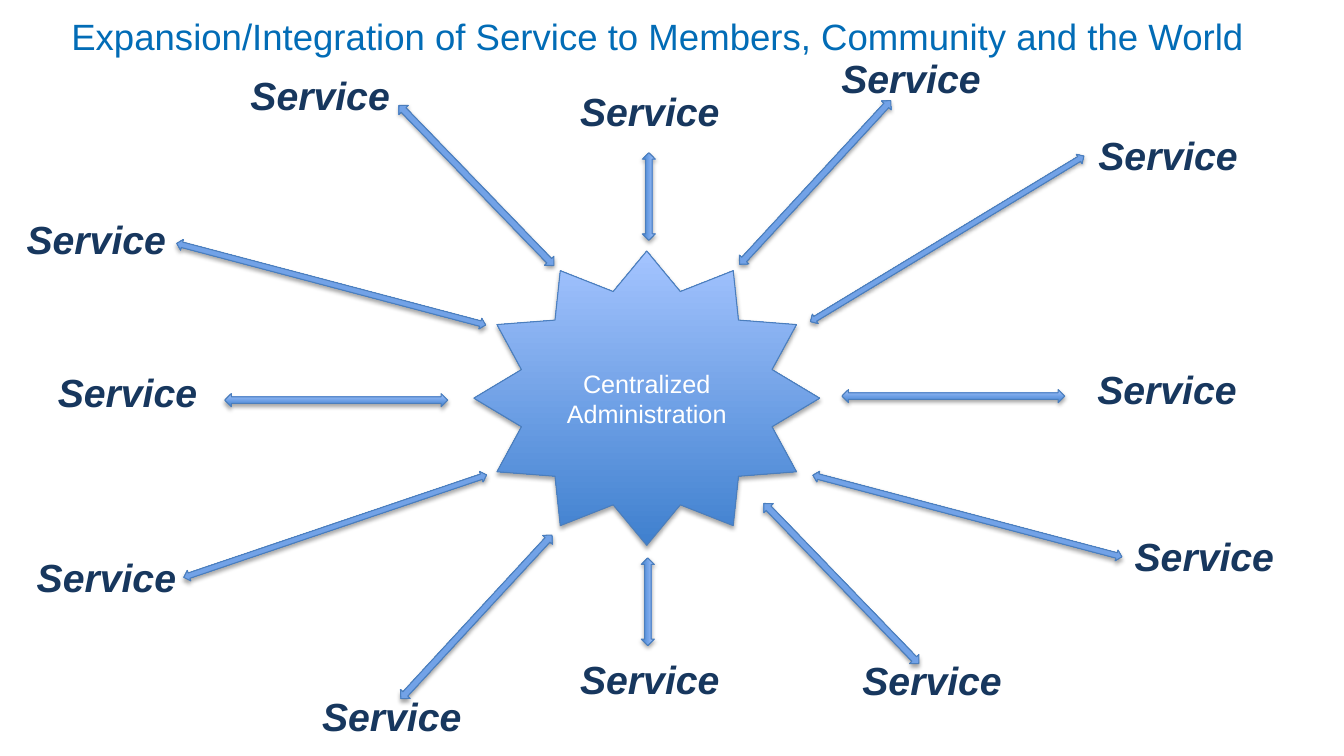
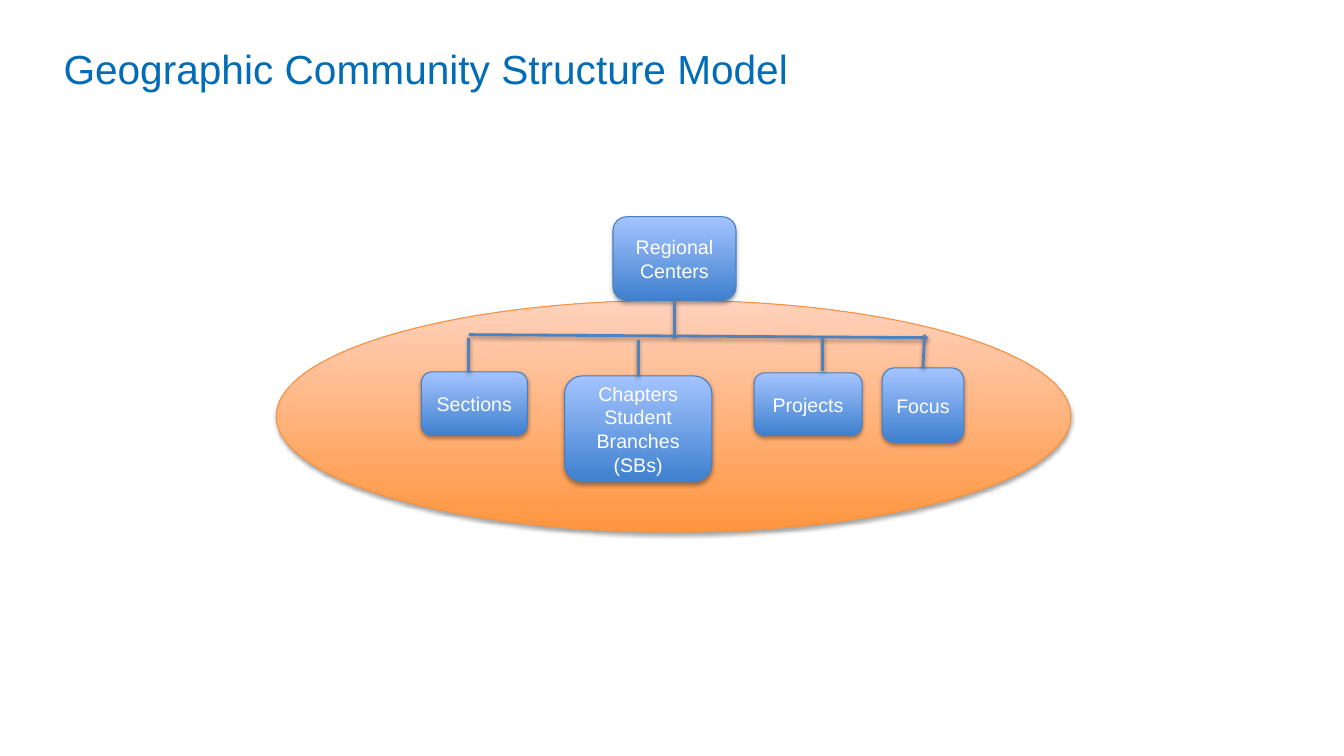
from collections import namedtuple

from lxml.etree import SubElement
from pptx import Presentation
from pptx.dml.color import RGBColor
from pptx.enum.shapes import MSO_CONNECTOR, MSO_SHAPE
from pptx.enum.text import MSO_ANCHOR, MSO_AUTO_SIZE, PP_ALIGN
from pptx.oxml.ns import qn
from pptx.util import Inches, Pt

FONT = "Arial"
TITLE_BLUE = "026CB6"
NAVY = "17375E"
WHITE = "FFFFFF"
BLACK = "000000"
LINK_BLUE = "4F81BD"

Box = namedtuple("Box", "left top width height")
Theme = namedtuple("Theme", "dark light outline")
Spoke = namedtuple("Spoke", "label arrow size rotation")
Node = namedtuple("Node", "text box")

BLUE = Theme("3F80CE", "A4C4FF", "4B7EBC")
ORANGE = Theme("FF953E", "FFD2BD", "F69240")

LONG = (3.17, 0.11)
MEDIUM = (2.21, 0.13)
SHORT = (0.87, 0.13)
LABEL = (1.6, 0.57)

SPOKES = [
    Spoke((5.17, -2.41), (2.98, -1.58), LONG, 328.8),
    Spoke((5.53, 1.57), (3.18, 1.17), LONG, 14.8),
    Spoke((-5.46, -1.58), (-3.13, -1.13), LONG, 14.8),
    Spoke((5.16, -0.09), (3.04, -0.02), MEDIUM, 0),
    Spoke((-5.36, 1.78), (-3.09, 1.27), LONG, 341.3),
    Spoke((-5.15, -0.06), (-3.08, 0.02), MEDIUM, 0),
    Spoke((0.03, -2.85), (0.02, -2), SHORT, 90),
    Spoke((0.03, 2.79), (0.01, 2.02), SHORT, 90),
    Spoke((-3.24, -3.01), (-1.69, -2.11), MEDIUM, 46),
    Spoke((2.62, -3.18), (1.67, -2.14), MEDIUM, 132.7),
    Spoke((2.83, 2.8), (1.93, 1.84), MEDIUM, 46),
    Spoke((-2.53, 3.15), (-1.69, 2.17), MEDIUM, 132.7),
]

REGIONAL = Node("Regional Centers", Box(3.34, -0.83, 1.22, 0.83))
UNITS = [
    Node("Sections", Box(1.44, 0.71, 1.05, 0.63)),
    Node("Chapters Student Branches\n(SBs)", Box(2.86, 0.75, 1.46, 1.05)),
    Node("Projects", Box(4.74, 0.72, 1.07, 0.62)),
    Node("Focus", Box(6.01, 0.67, 0.81, 0.74)),
]
DROPS = [(1.91, 0.37, False), (3.59, 0.39, True), (5.42, 0.36, False), (6.43, 0.34, True)]
DROP_LENGTH = 0.34


def rgb(color):
    return RGBColor.from_string(color)


def inches(box):
    return [Inches(length) for length in box]


def centred(center, size):
    return Box(center[0] - size[0] / 2, center[1] - size[1] / 2, *size)


def shifted(box, origin):
    return Box(origin.left + box.left, origin.top + box.top, box.width, box.height)


def format_text(frame, size, color, align=PP_ALIGN.CENTER):
    for paragraph in frame.paragraphs:
        paragraph.alignment = align
        for run in paragraph.runs:
            run.font.name = FONT
            run.font.size = Pt(size)
            run.font.color.rgb = rgb(color)


def fill_shadow(effects, distance, opacity):
    shadow = SubElement(effects, qn("a:outerShdw"), blurRad=str(Pt(3.1)),
                        dist=str(Pt(distance)), dir="5400000", rotWithShape="0")
    tint = SubElement(shadow, qn("a:srgbClr"), val=BLACK)
    SubElement(tint, qn("a:alpha"), val=str(opacity * 1000))


def add_glossy(slide, kind, box, theme, text="", size=14):
    shape = slide.shapes.add_shape(kind, *inches(box))
    shape.fill.gradient()
    shape.fill.gradient_angle = 90
    for stop, color, position in zip(shape.fill.gradient_stops, theme[:2], (0, 1)):
        stop.color.rgb = rgb(color)
        stop.position = position
    shape.line.color.rgb = rgb(theme.outline)
    shape.line.width = Pt(0.75)
    shape.shadow.inherit = False
    fill_shadow(shape._element.spPr.find(qn("a:effectLst")), 1.8, 35)
    if text:
        frame = shape.text_frame
        frame.text = text
        frame.word_wrap = True
        frame.vertical_anchor = MSO_ANCHOR.MIDDLE
        format_text(frame, size, WHITE)
    return shape


def add_link(slide, origin, start, end):
    ends = [Inches(base + step) for point in (start, end)
            for base, step in zip(origin, point)]
    link = slide.shapes.add_connector(MSO_CONNECTOR.STRAIGHT, *ends)
    link.line.color.rgb = rgb(LINK_BLUE)
    link.line.width = Pt(2)
    fill_shadow(SubElement(link._element.spPr, qn("a:effectLst")), 1.6, 38)
    return link


def add_titled_slide(deck, text, box, size, align):
    slide = deck.slides.add_slide(deck.slide_layouts[5])
    title = slide.shapes.title
    title.left, title.top, title.width, title.height = inches(box)
    frame = title.text_frame
    frame.text = text
    frame.auto_size = MSO_AUTO_SIZE.NONE
    frame.word_wrap = True
    frame.vertical_anchor = MSO_ANCHOR.TOP
    frame.margin_top = Inches(0.09)
    format_text(frame, size, TITLE_BLUE, align)
    return slide


def add_service_label(slide, center):
    label = slide.shapes.add_textbox(*inches(centred(center, LABEL)))
    frame = label.text_frame
    frame.text = "Service"
    frame.word_wrap = False
    frame.auto_size = MSO_AUTO_SIZE.SHAPE_TO_FIT_TEXT
    format_text(frame, 28, NAVY)
    run = frame.paragraphs[0].runs[0]
    run.font.bold = True
    run.font.italic = True
    properties = run.font._element
    outline = SubElement(properties, qn("a:ln"), w=str(Pt(0.75)))
    SubElement(SubElement(outline, qn("a:solidFill")), qn("a:srgbClr"), val=WHITE)
    properties.insert(0, outline)


def add_service_hub(slide, box):
    add_glossy(slide, MSO_SHAPE.STAR_12_POINT, box, BLUE, "Centralized Administration", 18)
    middle_x, middle_y = box.left + box.width / 2, box.top + box.height / 2

    def from_middle(offset):
        return middle_x + offset[0], middle_y + offset[1]

    for spoke in SPOKES:
        arrow_box = centred(from_middle(spoke.arrow), spoke.size)
        arrow = add_glossy(slide, MSO_SHAPE.LEFT_RIGHT_ARROW, arrow_box, BLUE)
        arrow.rotation = spoke.rotation
    for spoke in SPOKES:
        add_service_label(slide, from_middle(spoke.label))


def add_community_tree(slide, box):
    add_glossy(slide, MSO_SHAPE.OVAL, box, ORANGE)
    regional, *units = [
        add_glossy(slide, MSO_SHAPE.ROUNDED_RECTANGLE, shifted(node.box, box), BLUE, node.text)
        for node in [REGIONAL, *UNITS]
    ]
    stem = add_link(slide, box, (3.95, 0), (3.95, 0.37))
    stem.begin_connect(regional, 2)
    add_link(slide, box, (1.91, 0.34), (6.46, 0.37))
    for unit, (x, y, joined) in zip(units, DROPS):
        drop = add_link(slide, box, (x, y), (x, y + DROP_LENGTH))
        if joined:
            drop.end_connect(unit, 0)


def main():
    deck = Presentation()
    deck.slide_width, deck.slide_height = Inches(13.33), Inches(7.5)
    services = add_titled_slide(
        deck, "Expansion/Integration of Service to Members, Community and the World",
        Box(0.53, 0.05, 12, 0.61), 26.1, PP_ALIGN.CENTER)
    add_service_hub(services, Box(4.7, 2.49, 3.43, 2.92))
    communities = add_titled_slide(
        deck, "Geographic Community Structure Model",
        Box(0.53, 0.35, 12, 0.82), 29, PP_ALIGN.LEFT)
    add_community_tree(communities, Box(2.74, 2.98, 7.88, 2.3))
    deck.save("out.pptx")


if __name__ == "__main__":
    main()
